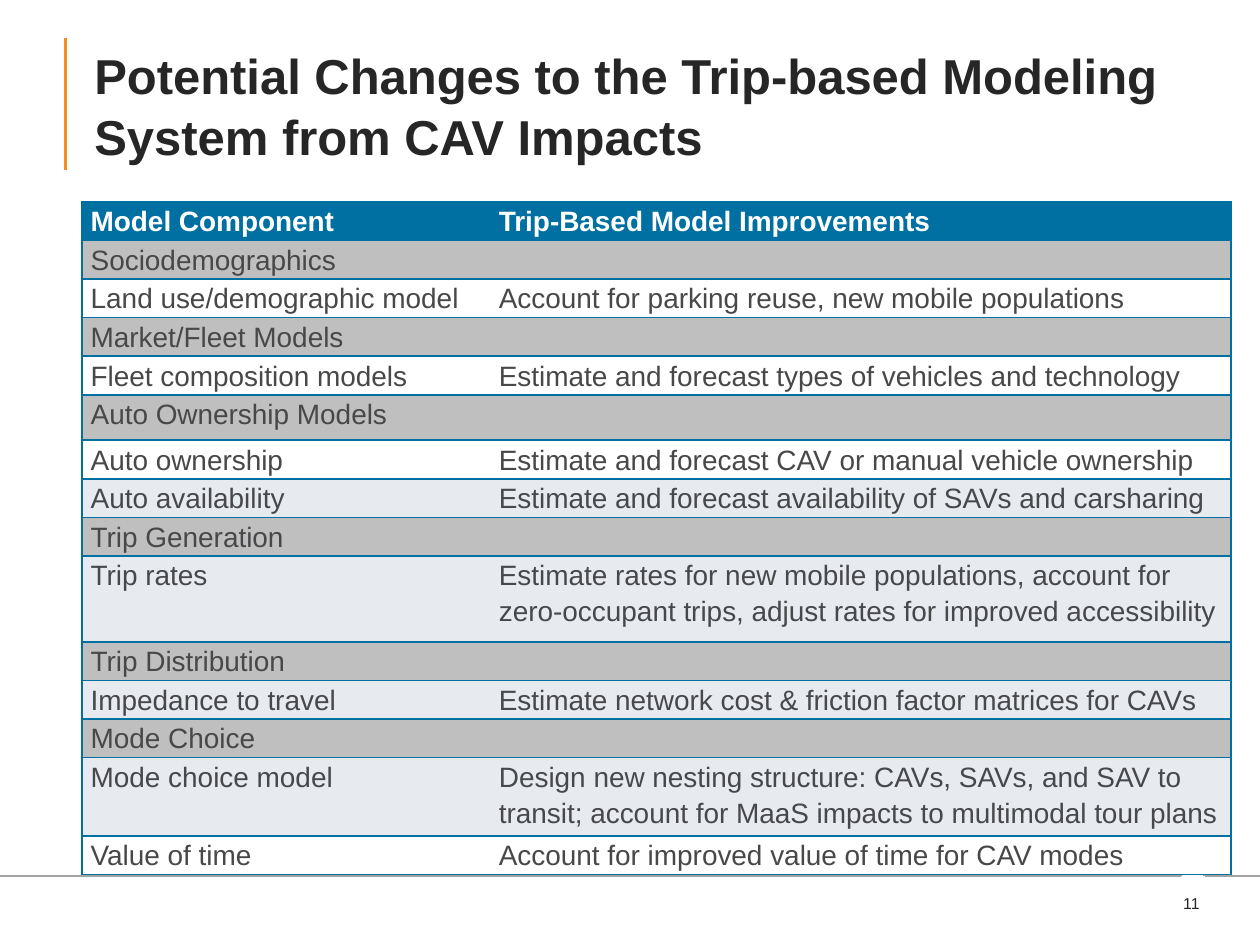
from lxml import etree
from pptx import Presentation
from pptx.dml.color import RGBColor
from pptx.enum.shapes import MSO_CONNECTOR
from pptx.enum.text import MSO_ANCHOR, PP_ALIGN
from pptx.oxml.ns import qn
from pptx.util import Inches, Pt

STRAIGHT = MSO_CONNECTOR.STRAIGHT
MIDDLE = MSO_ANCHOR.MIDDLE
LEFT, RIGHT = PP_ALIGN.LEFT, PP_ALIGN.RIGHT

BLUE, GRAY, PALE, WHITE = "006FA1", "BFBFBF", "E7EBF0", "FFFFFF"
DARK, BODY, ORANGE, RULE = "262626", "48484A", "F68B1F", "A3A3A5"

# First column, second column (None for a section row), fill, height
ROWS = [
    ("Model Component", "Trip-Based Model Improvements", BLUE, 0.3),
    ("Sociodemographics", None, GRAY, 0.3),
    ("Land use/demographic model",
     "Account for parking reuse, new mobile populations", WHITE, 0.3),
    ("Market/Fleet Models", None, GRAY, 0.3),
    ("Fleet composition models",
     "Estimate and forecast types of vehicles and technology", WHITE, 0.3),
    ("Auto Ownership Models", None, GRAY, 0.36),
    ("Auto ownership",
     "Estimate and forecast CAV or manual vehicle ownership", WHITE, 0.3),
    ("Auto availability",
     "Estimate and forecast availability of SAVs and carsharing", PALE, 0.3),
    ("Trip Generation", None, GRAY, 0.3),
    ("Trip rates",
     "Estimate rates for new mobile populations, account for zero-occupant "
     "trips, adjust rates for improved accessibility", PALE, 0.68),
    ("Trip Distribution", None, GRAY, 0.3),
    ("Impedance to travel",
     "Estimate network cost & friction factor matrices for CAVs", PALE, 0.3),
    ("Mode Choice", None, GRAY, 0.3),
    ("Mode choice model",
     "Design new nesting structure: CAVs, SAVs, and SAV to transit; account "
     "for MaaS impacts to multimodal tour plans", PALE, 0.62),
    ("Value of time",
     "Account for improved value of time for CAV modes", WHITE, 0.3),
]
COLS = [3.24, 5.88]


def color(text):
    return RGBColor.from_string(text)


def apply(target, values):
    for name, value in values.items():
        setattr(target, name, value)


def write(frame, text, size, tint, bold=False, align=LEFT, space=1.0):
    para = frame.paragraphs[0]
    apply(para, {"alignment": align, "line_spacing": space})
    run = para.add_run()
    run.text = text
    apply(run.font, {"name": "Arial", "size": Pt(size), "bold": bold})
    run.font.color.rgb = color(tint)


def add_text(slide, box, text, size, tint, pad=0.1, **style):
    frame = slide.shapes.add_textbox(*map(Inches, box)).text_frame
    apply(frame, {"word_wrap": True, "vertical_anchor": MIDDLE,
                  "margin_right": Inches(pad)})
    write(frame, text, size, tint, **style)


def add_line(slide, start, end, tint, width):
    line = slide.shapes.add_connector(STRAIGHT, *map(Inches, start + end))
    line.line.color.rgb = color(tint)
    line.line.width = Pt(width)
    etree.SubElement(line._element.spPr, qn("a:effectLst"))


def set_edges(cell, sides):
    props = cell._tc.get_or_add_tcPr()
    for side in "LRTB":
        edge = etree.SubElement(props, qn("a:ln" + side), w=str(Pt(1)))
        if side in sides:
            fill = etree.SubElement(edge, qn("a:solidFill"))
            etree.SubElement(fill, qn("a:srgbClr"), val=BLUE)
        else:
            etree.SubElement(edge, qn("a:noFill"))


def fill_cell(cell, text, fill, sides, head):
    set_edges(cell, sides)
    cell.fill.solid()
    cell.fill.fore_color.rgb = color(fill)
    apply(cell, {"margin_left": Inches(0.07), "margin_right": Inches(0.07),
                 "margin_top": 0, "margin_bottom": 0})
    if text:
        write(cell.text_frame, text, 16, WHITE if head else BODY,
              bold=head, space=1.15)


def add_grid(slide):
    high = sum(row[-1] for row in ROWS)
    box = map(Inches, (0.65, 1.6, sum(COLS), high))
    table = slide.shapes.add_table(len(ROWS), len(COLS), *box).table
    for col, width in zip(table.columns, COLS):
        col.width = Inches(width)
    for i, (name, change, fill, height) in enumerate(ROWS):
        table.rows[i].height = Inches(height)
        first, last = table.cell(i, 0), table.cell(i, 1)
        section = change is None
        fill_cell(first, name, fill, "LRTB" if section else "LTB", i == 0)
        fill_cell(last, change, fill, "RTB", i == 0)
        if section:
            first.merge(last)


def main():
    deck = Presentation()
    apply(deck, {"slide_width": Inches(10), "slide_height": Inches(7.5)})
    slide = deck.slides.add_slide(deck.slide_layouts[6])

    # Accent bar and notched footer rule
    add_line(slide, (0.52, 0.3), (0.52, 1.35), ORANGE, 1.5)
    notch = [(0, 6.95), (9.37, 6.95), (9.47, 6.85), (9.56, 6.95), (10, 6.95)]
    for start, end in zip(notch, notch[1:]):
        add_line(slide, start, end, RULE, 1)

    # Page number and title
    add_text(slide, (9.25, 7.04, 0.42, 0.25), "11", 9, DARK,
             pad=0.15, align=RIGHT)
    add_text(slide, (0.65, 0.3, 8.85, 1.05),
             "Potential Changes to the Trip-based Modeling System "
             "from CAV Impacts", 28, DARK, bold=True, space=1.05)

    # Table of model changes
    add_grid(slide)
    deck.save("out.pptx")


if __name__ == "__main__":
    main()
